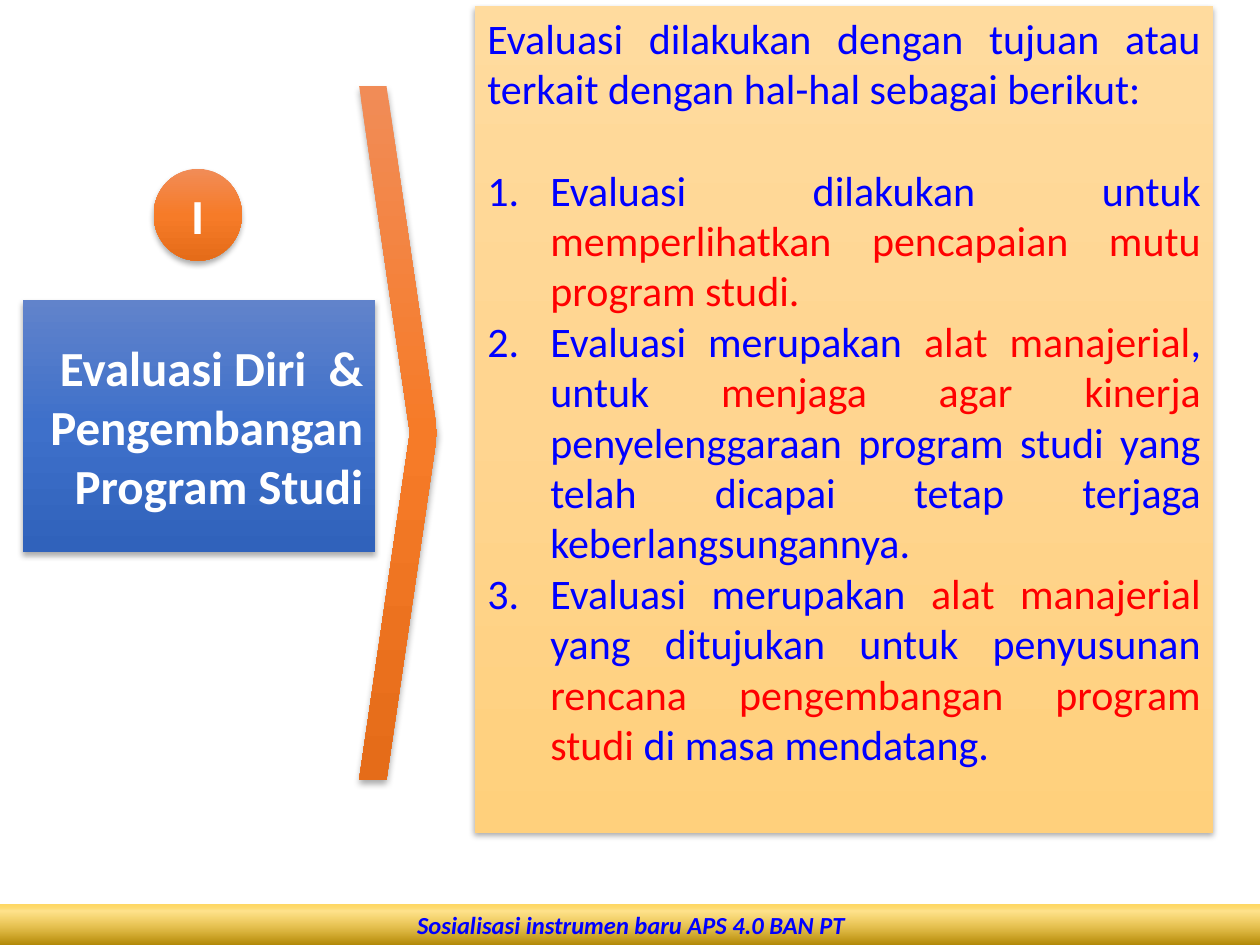
from lxml import etree
from pptx import Presentation
from pptx import util as u
from pptx.dml.color import RGBColor
from pptx.enum import shapes, text
from pptx.oxml import ns

BLUE, RED, WHITE = "0000FF", "FF0000", "FFFFFF"
ORANGE_FADE = [(0, "F18C57"), (50, "F67B28"), (100, "E56C19")]
BLUE_FADE = [(0, "6183CB"), (50, "3E70CA"), (100, "3062BB")]
SAND_FADE = [(0, "FFDB9E"), (50, "FFD590"), (100, "FFD07C")]
GOLD_FADE = [(0, "AB8100"), (83, "FFC208", 46), (100, "FFD966")]

INTRO = "Evaluasi dilakukan dengan tujuan atau terkait dengan hal-hal sebagai berikut:"
PURPOSES = [
    [("Evaluasi dilakukan untuk ", BLUE),
     ("memperlihatkan pencapaian mutu program studi.", RED)],
    [("Evaluasi merupakan ", BLUE), ("alat manajerial", RED), (", untuk ", BLUE),
     ("menjaga agar kinerja ", RED),
     ("penyelenggaraan program studi yang telah dicapai tetap terjaga "
      "keberlangsungannya.", BLUE)],
    [("Evaluasi merupakan ", BLUE), ("alat manajerial ", RED),
     ("yang ditujukan untuk penyusunan ", BLUE),
     ("rencana pengembangan program studi", RED), (" di masa mendatang.", BLUE)],
]


def rgb(value):
    return RGBColor.from_string(value)


def add_element(parent, tag, **attributes):
    element = etree.SubElement(parent, ns.qn(tag))
    for name, value in attributes.items():
        element.set(name, str(value))
    return element


def add_colour(parent, value, alpha=100):
    colour = add_element(parent, "a:srgbClr", val=value)
    if alpha < 100:
        add_element(colour, "a:alpha", val=alpha * 1000)


def write(paragraph, content, font="Calibri", size=24, colour=BLUE, bold=False,
          italic=False, align=text.PP_ALIGN.JUSTIFY):
    """Append one formatted run to the paragraph."""
    paragraph.alignment = align
    run = paragraph.add_run()
    run.text = content
    run.font.name, run.font.size = font, u.Pt(size)
    run.font.bold, run.font.italic = bold, italic
    run.font.color.rgb = rgb(colour)


def number(paragraph, indent=u.Inches(0.5)):
    """Turn the paragraph into an automatically numbered item."""
    properties = paragraph._p.get_or_add_pPr()
    properties.set("marL", str(indent))
    properties.set("indent", str(-indent))
    add_element(properties, "a:buFont", typeface="+mj-lt")
    add_element(properties, "a:buAutoNum", type="arabicPeriod")


class SlideBuilder:
    def __init__(self, slide):
        self.slide = slide

    def shape(self, kind, left, top, width, height, stops, angle=90, shadow=True):
        shape = self.slide.shapes.add_shape(
            kind, *(u.Inches(length) for length in (left, top, width, height)))
        shape.line.fill.background()
        shape.shadow.inherit = False
        self.gradient(shape, stops, angle)
        if shadow:
            self.cast_shadow(shape)
        return shape

    def gradient(self, shape, stops, angle):
        shape.fill.gradient()
        fill = shape._element.spPr.find(ns.qn("a:gradFill"))
        for child in list(fill):
            fill.remove(child)
        stop_list = add_element(fill, "a:gsLst")
        for position, *colour in stops:
            add_colour(add_element(stop_list, "a:gs", pos=position * 1000), *colour)
        add_element(fill, "a:lin", ang=angle * 60000, scaled=0)

    def cast_shadow(self, shape):
        effects = shape._element.spPr.find(ns.qn("a:effectLst"))
        shadow = add_element(effects, "a:outerShdw", blurRad=u.Pt(3.5), dist=u.Pt(2.2),
                             dir=90 * 60000, rotWithShape=0)
        add_colour(shadow, "000000", 32)

    def text_frame(self, shape, anchor=text.MSO_ANCHOR.MIDDLE):
        frame = shape.text_frame
        frame.word_wrap = True
        frame.vertical_anchor = anchor
        return frame

    def label(self, shape, content, anchor=text.MSO_ANCHOR.MIDDLE, **style):
        write(self.text_frame(shape, anchor).paragraphs[0], content, bold=True, **style)

    def numbered_panel(self, shape, intro, items):
        frame = self.text_frame(shape, text.MSO_ANCHOR.TOP)
        write(frame.paragraphs[0], intro)
        for index, runs in enumerate(items):
            paragraph = frame.add_paragraph()
            number(paragraph)
            if index == 0:
                paragraph.space_before = u.Pt(29)
            for content, colour in runs:
                write(paragraph, content, colour=colour)


def main():
    presentation = Presentation()
    presentation.slide_width, presentation.slide_height = u.Inches(10), u.Inches(7.5)
    builder = SlideBuilder(presentation.slides.add_slide(presentation.slide_layouts[6]))
    kinds, align = shapes.MSO_SHAPE, text.PP_ALIGN

    footer = builder.shape(kinds.RECTANGLE, -0.01, 7.17, 10.04, 0.34, GOLD_FADE,
                           angle=270, shadow=False)
    footer.line.color.rgb = rgb(WHITE)
    footer.line.width = u.Pt(0.75)
    builder.label(footer, "Sosialisasi instrumen baru APS 4.0 BAN PT", size=14,
                  italic=True, align=align.CENTER, anchor=text.MSO_ANCHOR.TOP)

    topic = builder.shape(kinds.RECTANGLE, 0.18, 2.38, 2.8, 2, BLUE_FADE)
    builder.label(topic, "Evaluasi Diri  & Pengembangan Program Studi", size=28,
                  colour=WHITE, align=align.RIGHT)

    chevron = builder.shape(kinds.CHEVRON, 2.85, 0.68, 0.62, 5.51, ORANGE_FADE)
    chevron.adjustments[0] = 0.65

    panel = builder.shape(kinds.RECTANGLE, 3.77, 0.05, 5.86, 6.56, SAND_FADE)
    builder.numbered_panel(panel, INTRO, PURPOSES)

    badge = builder.shape(kinds.OVAL, 1.22, 1.34, 0.7, 0.73, ORANGE_FADE)
    builder.label(badge, "I", size=28, colour=WHITE, align=align.CENTER)

    presentation.save("out.pptx")


if __name__ == "__main__":
    main()
